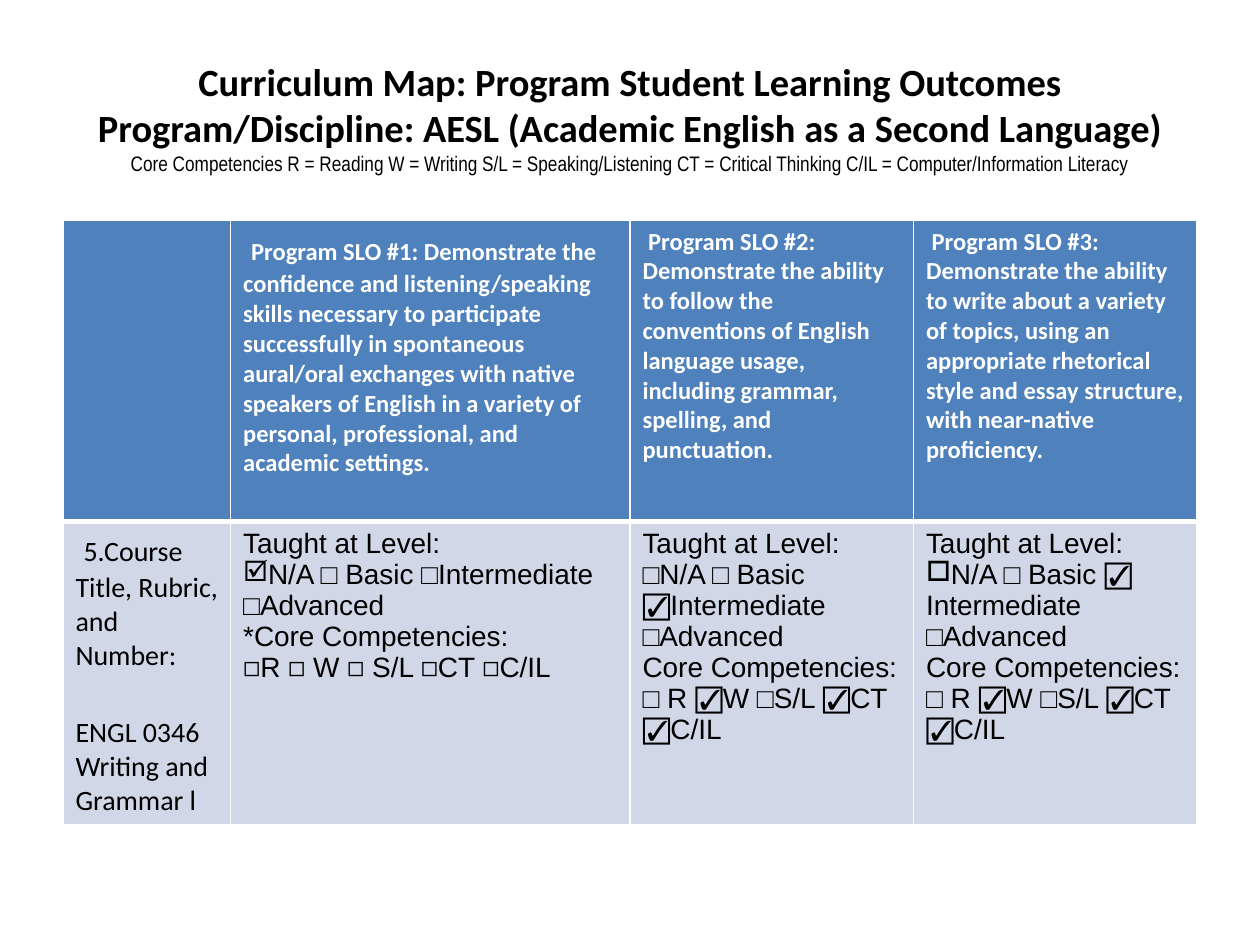
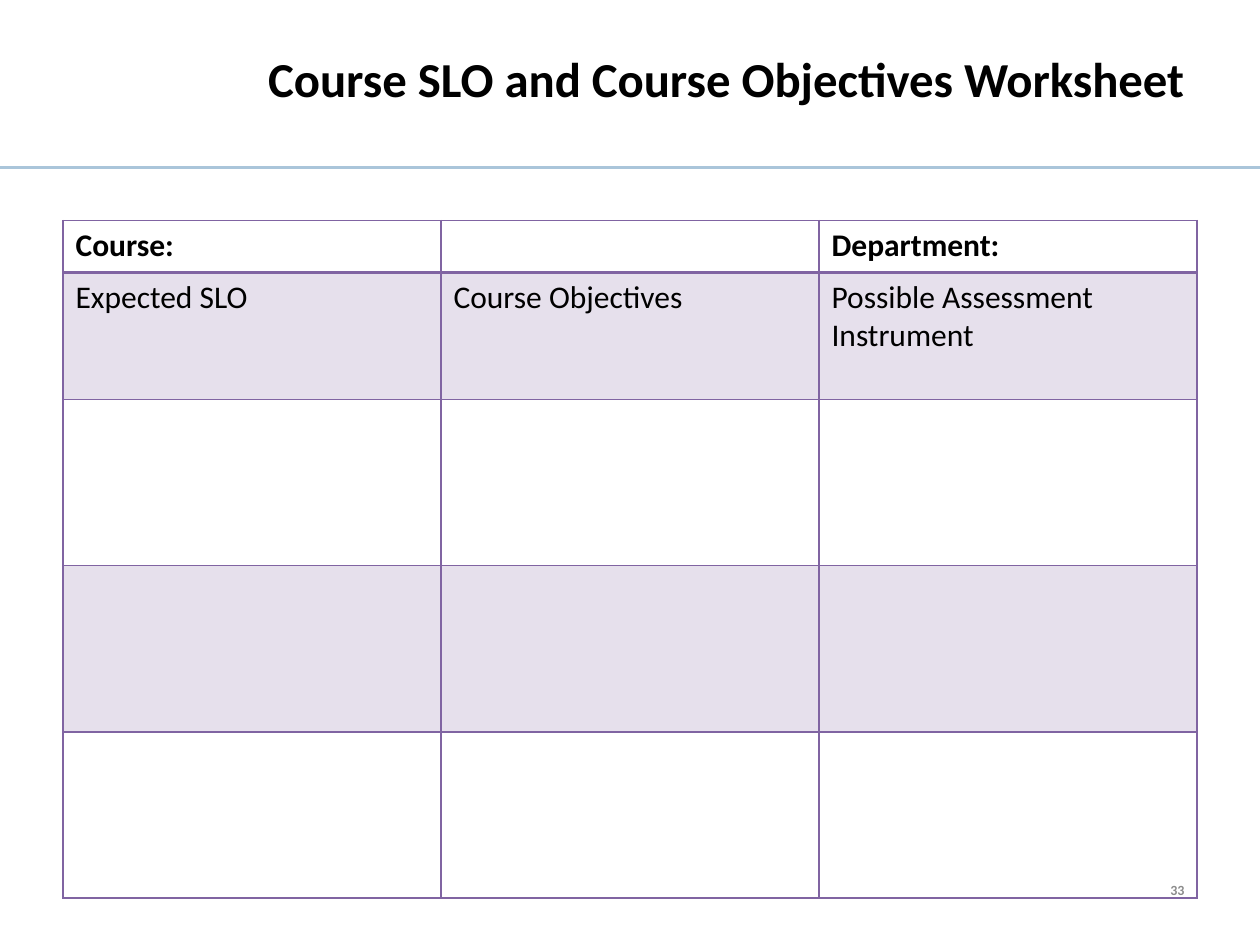
from lxml import etree
from pptx import Presentation
from pptx.dml.color import RGBColor
from pptx.enum.shapes import MSO_CONNECTOR
from pptx.enum.text import MSO_ANCHOR, MSO_AUTO_SIZE, PP_ALIGN
from pptx.oxml.ns import qn
from pptx.util import Inches, Pt

# Shared look
BLACK, WHITE, GREY = "000000", "FFFFFF", "8C8C8C"
BLUE, PALE_BLUE, RULE_BLUE = "4F81BD", "D0D8E8", "AAC5DA"
PURPLE, PALE_PURPLE = "8064A2", "E6E0EC"
TITLE_BOX = (0.5, 0.3, 9, 1.25)
TABLE_LEFT, TABLE_TOP = 0.5, 1.75

OUTCOMES = [
    "Program SLO #1: Demonstrate the confidence and listening/speaking skills "
    "necessary to participate successfully in spontaneous aural/oral exchanges "
    "with native speakers of English in a variety of personal, professional, "
    "and academic settings.",
    " Program SLO #2: Demonstrate the ability to follow the conventions of "
    "English language usage, including grammar, spelling, and punctuation.",
    " Program SLO #3: Demonstrate the ability to write about a variety of "
    "topics, using an appropriate rhetorical style and essay structure, with "
    "near-native proficiency.",
]
COURSE = ["5.Course Title, Rubric, and Number:", "ENGL 0346",
          "Writing and Grammar l"]
COMPETENCIES = "□ R ☑W □S/L ☑CT ☑C/IL"
# A pair is a bullet character and its text
LEVELS = [
    ["Taught at Level:", ("☑", "N/A □ Basic □Intermediate □Advanced"),
     "*Core Competencies:", "◻R ◻ W ◻ S/L ◻CT ◻C/IL"],
    ["Taught at Level:", "□N/A □ Basic ☑Intermediate □Advanced",
     "Core Competencies:", COMPETENCIES],
    ["Taught at Level:", ("□", "N/A □ Basic ☑ Intermediate □Advanced"),
     "Core Competencies:", COMPETENCIES],
]


def color(value):
    return RGBColor.from_string(value)


def set_font(font, size, name="Calibri", bold=False, ink=BLACK):
    font.size, font.name, font.bold = Pt(size), name, bold
    font.color.rgb = color(ink)


def inches(box):
    return [Inches(value) for value in box]


def add_title(slide, box, lines, align, anchor):
    """Lines are (text, size, font name, bold), parted by line breaks."""
    title = slide.shapes.title
    title.left, title.top, title.width, title.height = inches(box)
    frame = title.text_frame
    frame.auto_size, frame.word_wrap = MSO_AUTO_SIZE.NONE, True
    frame.vertical_anchor = anchor
    paragraph = frame.paragraphs[0]
    paragraph.alignment = align
    for index, (text, *style) in enumerate(lines):
        if index:
            paragraph.add_line_break()
        run = paragraph.add_run()
        run.text = text
        set_font(run.font, *style)
    return frame


def add_grid(slide, left, top, widths, heights):
    frame = slide.shapes.add_table(
        len(heights), len(widths),
        *inches((left, top, sum(widths), sum(heights))))
    table = frame.table
    table.first_row = table.horz_banding = False
    for column, width in zip(table.columns, widths):
        column.width = Inches(width)
    for row, height in zip(table.rows, heights):
        row.height = Inches(height)
    return table


def paint_cell(cell, fill, line, top=1, bottom=1):
    """Draw the four borders, then the fill."""
    properties = cell._tc.get_or_add_tcPr()
    for side, width in (("L", 1), ("R", 1), ("T", top), ("B", bottom)):
        border = etree.SubElement(properties, qn(f"a:ln{side}"), w=str(Pt(width)))
        solid = etree.SubElement(border, qn("a:solidFill"))
        etree.SubElement(solid, qn("a:srgbClr"), val=line)
    cell.fill.solid()
    cell.fill.fore_color.rgb = color(fill)


def paint_table(table, fills, line, rule):
    """Fill row by row, with a heavier rule under the header."""
    for index, (row, fill) in enumerate(zip(table.rows, fills)):
        for cell in row.cells:
            paint_cell(cell, fill, line, top=rule if index == 1 else 1,
                       bottom=rule if index == 0 else 1)


def write_cell(cell, lines, size, lead_size=None, **style):
    """lead_size puts a space of that size before the first line."""
    frame = cell.text_frame
    for index, line in enumerate(lines):
        paragraph = frame.add_paragraph() if index else frame.paragraphs[0]
        bullet, text = line if isinstance(line, tuple) else (None, line)
        set_font(paragraph.font, size, **style)
        if lead_size and index == 0:
            lead = paragraph.add_run()
            lead.text = " "
            lead.font.size = Pt(lead_size)
        paragraph.add_run().text = text
        if bullet:
            properties = paragraph._p.get_or_add_pPr()
            properties.set("marL", "0")
            properties.set("indent", "0")
            mark = etree.Element(qn("a:buChar"), char=bullet)
            properties.insert(0, mark)


def curriculum_table(slide, left, top):
    table = add_grid(slide, left, top, [1.33, 3.17, 2.25, 2.25], [2.39, 2.38])
    paint_table(table, [BLUE, PALE_BLUE], WHITE, rule=3)
    for column, (outcome, levels) in enumerate(zip(OUTCOMES, LEVELS), 1):
        write_cell(table.cell(0, column), [outcome], 14, bold=True, ink=WHITE,
                   lead_size=20 if column == 1 else None)
        write_cell(table.cell(1, column), levels, 16, name="Arial")
    course_cell = table.cell(1, 0)
    write_cell(course_cell, COURSE, 16, lead_size=20)
    course_cell.text_frame.paragraphs[1].space_before = Pt(24)


def worksheet_table(slide, left, top):
    table = add_grid(slide, left, top, [3] * 3, [0.41, 1.01] + [1.32] * 3)
    paint_table(table, [WHITE, PALE_PURPLE, WHITE, PALE_PURPLE, WHITE],
                PURPLE, rule=2)
    rows = [["Course:", "", "Department:"],
            ["Expected SLO", "Course Objectives",
             "Possible Assessment Instrument"]]
    for index, texts in enumerate(rows):
        for column, text in enumerate(texts):
            if text:
                write_cell(table.cell(index, column), [text], 18,
                           bold=index == 0)


def add_rule(slide, top, width):
    rule = slide.shapes.add_connector(
        MSO_CONNECTOR.STRAIGHT, *inches((width, top, 0, top)))
    rule.line.color.rgb = color(RULE_BLUE)
    rule.line.width = Pt(2)
    etree.SubElement(rule._element.spPr, qn("a:effectLst"))


def add_page_number(slide, box, number):
    frame = slide.shapes.add_textbox(*inches(box)).text_frame
    frame.word_wrap = True
    paragraph = frame.paragraphs[0]
    paragraph.text = number
    paragraph.alignment = PP_ALIGN.RIGHT
    set_font(paragraph.font, 8, bold=True, ink=GREY)


def curriculum_slide(slide):
    add_title(slide, TITLE_BOX, [
        ("Curriculum Map: Program Student Learning Outcomes",
         22, "Calibri", True),
        ("Program/Discipline: AESL (Academic English as a Second Language)",
         22, "Calibri", True),
        ("Core Competencies R = Reading W = Writing S/L = Speaking/Listening "
         "CT = Critical Thinking C/IL = Computer/Information Literacy",
         12, "Arial Narrow", False),
    ], PP_ALIGN.CENTER, MSO_ANCHOR.MIDDLE)
    curriculum_table(slide, TABLE_LEFT, TABLE_TOP)


def worksheet_slide(slide):
    add_rule(slide, 1.33, 10)
    frame = add_title(slide, TITLE_BOX, [
        ("Course SLO and Course Objectives Worksheet", 27.9, "Calibri", True),
    ], PP_ALIGN.RIGHT, MSO_ANCHOR.TOP)
    frame.margin_top = Inches(0.09)
    worksheet_table(slide, TABLE_LEFT, TABLE_TOP)
    add_page_number(slide, (7.17, 6.95, 2.33, 0.4), "33")


def main():
    presentation = Presentation()
    presentation.slide_width, presentation.slide_height = inches((10, 7.5))
    title_only = presentation.slide_layouts[5]
    for build in (curriculum_slide, worksheet_slide):
        build(presentation.slides.add_slide(title_only))
    presentation.save("out.pptx")


if __name__ == "__main__":
    main()
